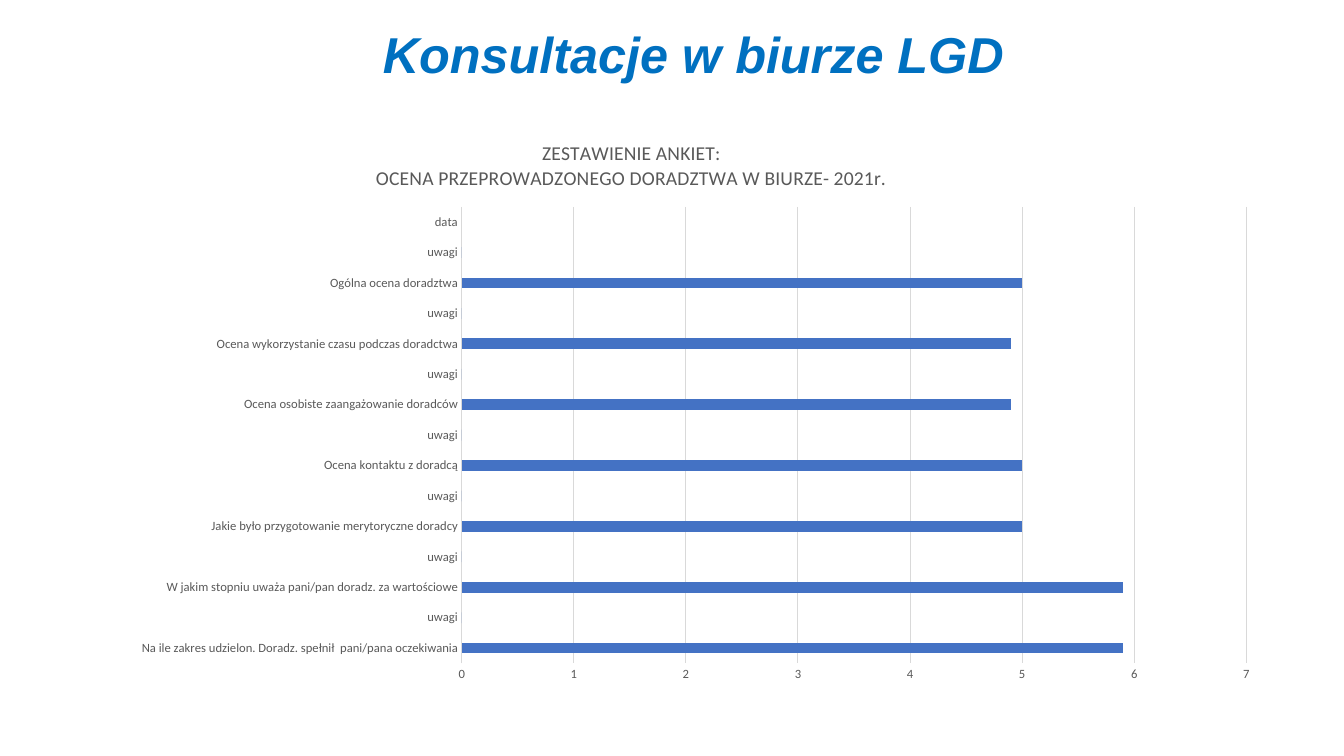
from lxml.etree import SubElement
from pptx import Presentation
from pptx.chart.data import CategoryChartData as Data
from pptx.dml.color import RGBColor
from pptx.enum.chart import XL_CHART_TYPE as Kind, XL_TICK_MARK as Tick
from pptx.enum.text import MSO_ANCHOR as Anchor, PP_ALIGN as Align
from pptx.oxml.ns import qn
from pptx.util import Cm, Pt

BLUE = RGBColor(0x00, 0x70, 0xC0)
BAR = RGBColor(0x44, 0x72, 0xC4)
GREY = RGBColor(0x59, 0x59, 0x59)
PALE = RGBColor(0xD9, 0xD9, 0xD9)

NOTE = "uwagi"
SCORES = [
    ("Na ile zakres udzielon. Doradz. spełnił  pani/pana oczekiwania", 5.9),
    ("W jakim stopniu uważa pani/pan doradz. za wartościowe", 5.9),
    ("Jakie było przygotowanie merytoryczne doradcy", 5),
    ("Ocena kontaktu z doradcą", 5),
    ("Ocena osobiste zaangażowanie doradców", 4.9),
    ("Ocena wykorzystanie czasu podczas doradctwa", 4.9),
    ("Ogólna ocena doradztwa", 5),
]
HEADING = [
    "ZESTAWIENIE ANKIET:",
    "OCENA PRZEPROWADZONEGO DORADZTWA W BIURZE- 2021r.",
]


def style(font, name, size, color, bold=False, italic=False):
    font.name = name
    font.size = Pt(size)
    font.color.rgb = color
    font.bold = bold
    font.italic = italic


def rule(line, color):
    line.color.rgb = color
    line.width = Pt(0.75)


def place(part, index, **spots):
    for old in part.findall(qn("c:layout")):
        part.remove(old)
    layout = SubElement(part, qn("c:layout"))
    manual = SubElement(layout, qn("c:manualLayout"))
    for tag, value in spots.items():
        SubElement(manual, qn("c:" + tag)).set("val", str(value))
    part.insert(index, layout)


def add_title(slide, text):
    title = slide.shapes.title
    title.left, title.top = Cm(2.34), Cm(0.28)
    title.width, title.height = Cm(30.28), Cm(2.31)
    frame = title.text_frame
    frame.vertical_anchor = Anchor.MIDDLE
    para = frame.paragraphs[0]
    para.alignment = Align.CENTER
    para.line_spacing = 0.9
    run = para.add_run()
    run.text = text
    style(run.font, "Arial", 36, BLUE, True, True)


def add_heading(chart):
    chart.has_title = True
    title = chart.chart_title
    title.include_in_layout = False
    frame = title.text_frame
    for i, text in enumerate(HEADING):
        para = frame.add_paragraph() if i else frame.paragraphs[0]
        para.alignment = Align.CENTER
        run = para.add_run()
        run.text = text
        style(run.font, "Calibri", 14, GREY)
    place(title._element, 1, xMode="edge", yMode="edge", x=0.22, y=0.03)


def format_axes(chart):
    for axis in (chart.category_axis, chart.value_axis):
        axis.major_tick_mark = axis.minor_tick_mark = Tick.NONE
        style(axis.tick_labels.font, "Calibri", 9, GREY)
    names, scale = chart.category_axis, chart.value_axis
    names.has_major_gridlines = False
    rule(names.format.line, PALE)
    scale.minimum_scale, scale.maximum_scale = 0, 7
    scale.major_unit = 1
    scale.has_major_gridlines = True
    rule(scale.major_gridlines.format.line, PALE)
    scale.format.line.fill.background()
    scale.tick_labels.number_format = "General"
    scale.tick_labels.number_format_is_linked = False


def add_bars(slide):
    data = Data()
    rows = [row for label, score in SCORES for row in ((label, score), (NOTE, 0))]
    rows.append(("data", None))
    data.categories = [label for label, score in rows]
    data.add_series("Series 1", [score for label, score in rows])
    chart = slide.shapes.add_chart(
        Kind.BAR_CLUSTERED, Cm(3), Cm(3.02), Cm(29.08), Cm(14.45), data
    ).chart
    chart.has_legend = False
    chart.font.name = "Calibri"
    chart.font.size = Pt(10)
    plot = chart.plots[0]
    plot.gap_width = 182
    plot.vary_by_categories = False
    fill = plot.series[0].format.fill
    fill.solid()
    fill.fore_color.rgb = BAR
    add_heading(chart)
    format_axes(chart)
    area = chart._chartSpace.find(".//" + qn("c:plotArea"))
    place(area, 0, layoutTarget="inner", xMode="edge", yMode="edge",
          x=0.297, y=0.152, w=0.68, h=0.796)


def main():
    deck = Presentation()
    deck.slide_width, deck.slide_height = Cm(33.87), Cm(19.05)
    slide = deck.slides.add_slide(deck.slide_layouts[5])
    add_title(slide, "Konsultacje w biurze LGD")
    add_bars(slide)
    deck.save("out.pptx")


if __name__ == "__main__":
    main()
